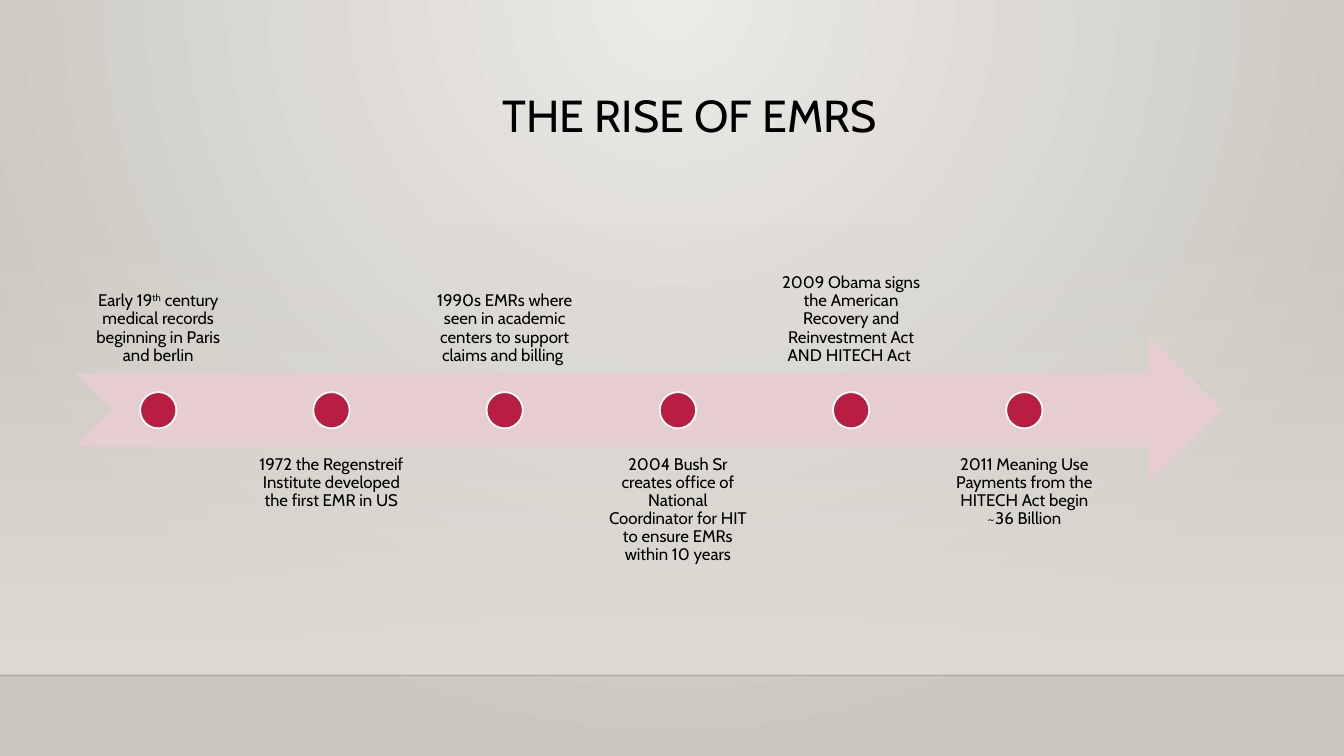
from lxml import etree
from pptx import Presentation
from pptx.dml.color import RGBColor
from pptx.enum import shapes, text
from pptx.oxml.ns import qn
from pptx.util import Inches, Pt

BLACK = RGBColor(0x00, 0x00, 0x00)
WHITE = RGBColor(0xFF, 0xFF, 0xFF)
CRIMSON = RGBColor(0xB7, 0x1E, 0x42)
PINK = RGBColor(0xE6, 0xCD, 0xCF)
PALE = RGBColor(0xEC, 0xEA, 0xE7)
STONE = RGBColor(0xCA, 0xC7, 0xC1)
SAND = RGBColor(0xDF, 0xDB, 0xD5)
FLOOR_LINE = RGBColor(0x00, 0x00, 0x01)


def write_text(shape, content, size=12, anchor=text.MSO_ANCHOR.TOP, inset=None):
    """Fill a shape with centred text; parts between ^ marks are superscript."""
    frame = shape.text_frame
    frame.word_wrap = True
    frame.auto_size = text.MSO_AUTO_SIZE.NONE
    frame.vertical_anchor = anchor
    if inset is not None:
        frame.margin_left = frame.margin_right = Inches(inset)
        frame.margin_top = frame.margin_bottom = Inches(inset)
    paragraph = frame.paragraphs[0]
    paragraph.alignment = text.PP_ALIGN.CENTER
    paragraph.line_spacing = 0.9
    for index, part in enumerate(content.split("^")):
        run = paragraph.add_run()
        run.text = part
        run.font.name = "Cabin"
        run.font.size = Pt(size)
        run.font.color.rgb = BLACK
        if index % 2:
            run.font._element.set("baseline", "30000")


def add_solid(kind, left, top, width, height, color):
    shape = slide.shapes.add_shape(
        kind, Inches(left), Inches(top), Inches(width), Inches(height))
    shape.shadow.inherit = False
    shape.fill.solid()
    shape.fill.fore_color.rgb = color
    shape.line.fill.background()
    return shape


presentation = Presentation()
presentation.slide_width = Inches(13.33)
presentation.slide_height = Inches(7.5)
slide = presentation.slides.add_slide(presentation.slide_layouts[5])

# Background: circular gradient from the top centre
background = slide.background.fill
background.gradient()
for stop, color in zip(background.gradient_stops, (PALE, STONE)):
    stop.color.rgb = color
gradient = slide._element.find(".//" + qn("a:gradFill"))
gradient.remove(gradient.find(qn("a:lin")))
circle = etree.SubElement(gradient, qn("a:path"), {"path": "circle"})
etree.SubElement(circle, qn("a:fillToRect"),
                 {"l": "43000", "t": "0", "r": "43000", "b": "100000"})

# Wall: sand colour that fades in downwards
wall = add_solid(shapes.MSO_SHAPE.RECTANGLE, 0, 2.21, 13.33, 4.49, SAND)
wall.fill.gradient()
wall.fill.gradient_angle = 270
for stop in wall.fill.gradient_stops:
    stop.color.rgb = SAND
clear_color = wall._element.find(".//" + qn("a:srgbClr"))
etree.SubElement(clear_color, qn("a:alpha"), {"val": "0"})

# Floor line
floor = slide.shapes.add_connector(
    shapes.MSO_CONNECTOR.STRAIGHT, 0, Inches(6.7), Inches(13.33), Inches(6.7))
floor.line.color.rgb = FLOOR_LINE
floor.line.width = Pt(1)
etree.SubElement(floor._element.find(".//" + qn("a:srgbClr")),
                 qn("a:alpha"), {"val": "20000"})
etree.SubElement(floor._element.spPr, qn("a:effectLst"))

# Title
title = slide.shapes.title
title.left, title.top = Inches(1.59), Inches(0.88)
title.width, title.height = Inches(10.5), Inches(1.15)
write_text(title, "THE RISE OF EMRS", size=32)

# Timeline arrow
add_solid(shapes.MSO_SHAPE.NOTCHED_RIGHT_ARROW, 0.75, 3.34, 11.37, 1.45, PINK)

# Events, alternating above and below the arrow
events = [
    "Early 19^th^ century medical records beginning in Paris and berlin",
    "1972 the Regenstreif Institute developed the first EMR in US",
    "1990s EMRs where seen in academic centers to support claims and billing ",
    "2004 Bush Sr creates office of National Coordinator for HIT to ensure EMRs "
    "within 10 years",
    "2009 Obama signs the American Recovery and Reinvestment Act AND HITECH Act ",
    "2011 Meaning Use Payments from the HITECH Act begin ~36 Billion",
]
event_pitch = 8.59 / 5
for index, event in enumerate(events):
    left = 0.75 + index * event_pitch
    if index % 2 == 0:
        top, anchor = 2.26, text.MSO_ANCHOR.BOTTOM
    else:
        top, anchor = 4.43, text.MSO_ANCHOR.TOP
    label = slide.shapes.add_textbox(
        Inches(left), Inches(top), Inches(1.64), Inches(1.45))
    write_text(label, event, anchor=anchor, inset=0.09)
    dot = add_solid(shapes.MSO_SHAPE.OVAL, left + 0.64, 3.89, 0.36, 0.36, CRIMSON)
    dot.line.color.rgb = WHITE
    dot.line.width = Pt(1.25)

presentation.save("out.pptx")
